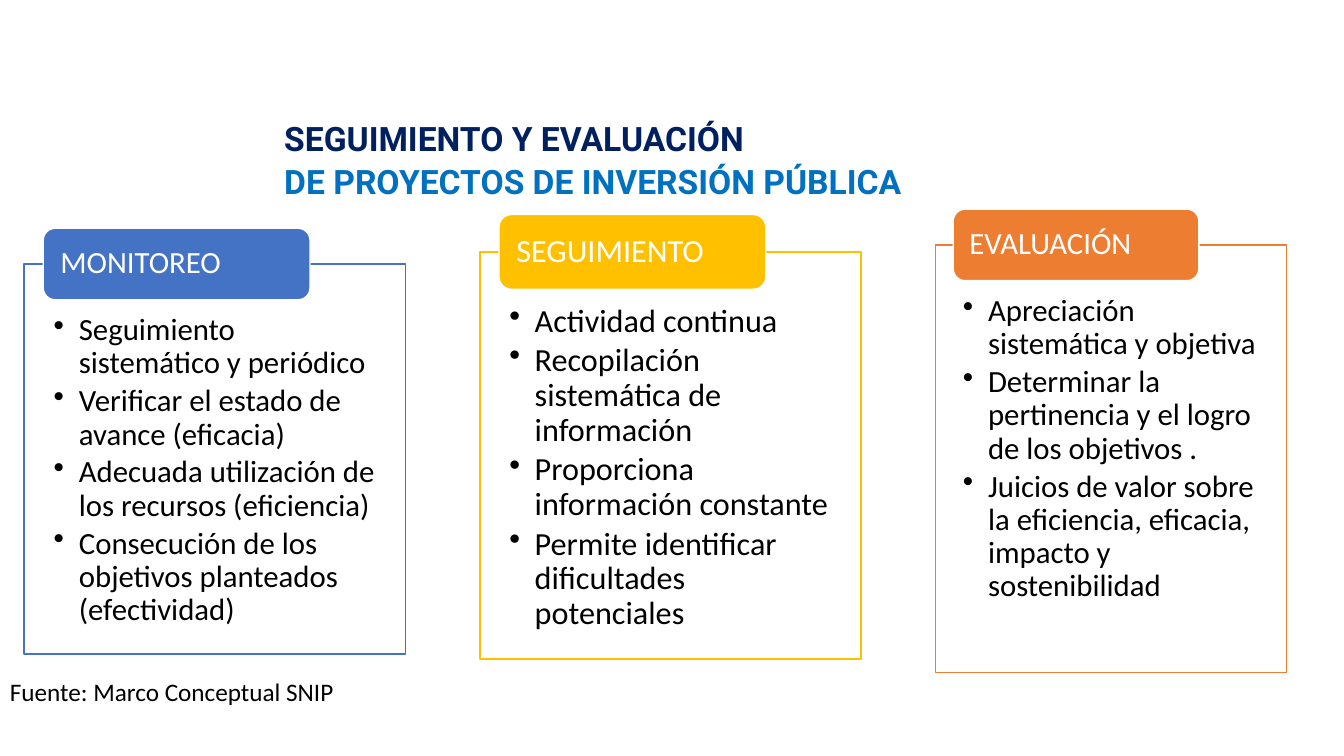
from lxml import etree
from pptx import Presentation
from pptx.dml.color import RGBColor
from pptx.enum.shapes import MSO_SHAPE
from pptx.enum.text import MSO_ANCHOR, PP_ALIGN
from pptx.oxml.ns import qn
from pptx.util import Inches, Pt

RECTANGLE = MSO_SHAPE.RECTANGLE
ROUNDED = MSO_SHAPE.ROUNDED_RECTANGLE
TOP, MIDDLE = MSO_ANCHOR.TOP, MSO_ANCHOR.MIDDLE
LEFT = PP_ALIGN.LEFT

WIDTH, HEIGHT = Inches(13.33), Inches(7.5)
BODY_FONT, TITLE_FONT = "Calibri", "Roboto"
WHITE, BLACK = "FFFFFF", "000000"
FIRST_CARD, CARD_STEP = 1.8, 33.91  # percent of the slide's width

# heading, colour, text size, top, width and height in percent, points
CARDS = [
    ("MONITOREO", "4472C4", 22, 34.93, 28.36, 51.6, [
        "Seguimiento sistemático y periódico",
        "Verificar el estado de avance (eficacia)",
        "Adecuada utilización de los recursos (eficiencia)",
        "Consecución de los objetivos planteados (efectividad)"]),
    ("SEGUIMIENTO", "FFC000", 23, 33.33, 28.36, 53.87, [
        "Actividad continua",
        "Recopilación sistemática de información",
        "Proporciona información constante",
        "Permite identificar dificultades potenciales"]),
    ("EVALUACIÓN", "ED7D31", 22, 32.4, 26.11, 56.53, [
        "Apreciación sistemática y objetiva",
        "Determinar la pertinencia y el logro de los objetivos .",
        "Juicios de valor sobre la eficiencia, eficacia, impacto y "
        "sostenibilidad"]),
]


def color(value):
    return RGBColor.from_string(value)


def across(percent):
    return round(WIDTH * percent / 100)


def down(percent):
    return round(HEIGHT * percent / 100)


def place(left, top, width, height):
    """Turn shares of the slide, in percent, into lengths."""
    return across(left), down(top), across(width), down(height)


def add_bullet(para):
    properties = para._p.get_or_add_pPr()
    properties.set("marL", str(Inches(0.25)))
    properties.set("indent", str(-Inches(0.25)))
    etree.SubElement(properties, qn("a:buChar"), char="•")


def write(box, lines, size, colors=(BLACK,), font=BODY_FONT, bold=False,
          bullets=False, anchor=TOP, insets=None, spacing=None, before=0,
          after=0):
    """Fill a box with paragraphs; colors are taken in turn."""
    frame = box.text_frame
    frame.word_wrap = True
    frame.vertical_anchor = anchor
    if insets:
        (frame.margin_left, frame.margin_top,
         frame.margin_right, frame.margin_bottom) = insets
    for index, line in enumerate(lines):
        para = frame.paragraphs[0] if index == 0 else frame.add_paragraph()
        para.alignment = LEFT
        if spacing:
            para.line_spacing = spacing
        if index and before:
            para.space_before = Pt(before)
        para.space_after = Pt(after)
        if bullets:
            add_bullet(para)
        span = para.add_run()
        span.text = line
        span.font.name = font
        span.font.size = Pt(size)
        span.font.bold = bold
        span.font.color.rgb = color(colors[index % len(colors)])


def add_panel(page, kind, area, fill, line, opacity=100):
    panel = page.shapes.add_shape(kind, *place(*area))
    panel.shadow.inherit = False
    panel.fill.solid()
    panel.fill.fore_color.rgb = color(fill)
    if opacity < 100:
        tone = panel._element.spPr.find(qn("a:solidFill"))[0]
        etree.SubElement(tone, qn("a:alpha"), val=str(opacity * 1000))
    panel.line.color.rgb = color(line)
    panel.line.width = Pt(1)
    return panel


def add_card(page, left, heading, accent, size, top, width, height, points):
    """Draw a bulleted frame with its heading tab centred on the top edge."""
    tab_height = 0.43 * size
    side = across(0.0776 * width)
    body = add_panel(page, RECTANGLE, (left, top, width, height),
                     WHITE, accent, opacity=90)
    write(body, points, size, bullets=True, spacing=0.9, after=0.15 * size,
          insets=(side, down(0.7 * tab_height), side, down(0.24 * tab_height)))

    tab_area = (left + 0.05 * width, top - tab_height / 2,
                0.7 * width, tab_height)
    tab = add_panel(page, ROUNDED, tab_area, accent, WHITE)
    side = across(0.036 * width)
    write(tab, [heading], size, colors=(WHITE,), anchor=MIDDLE, spacing=0.9,
          insets=(side, 0, side, 0))


def add_label(page, area, lines, size, **style):
    box = page.shapes.add_textbox(*place(*area))
    write(box, lines, size, **style)


def main():
    deck = Presentation()
    deck.slide_width, deck.slide_height = WIDTH, HEIGHT
    page = deck.slides.add_slide(deck.slide_layouts[6])
    add_label(page, (20.41, 14.93, 74.04, 12.53),
              ["SEGUIMIENTO Y EVALUACIÓN",
               "DE PROYECTOS DE INVERSIÓN PÚBLICA"],
              24, colors=("002060", "0070C0"), font=TITLE_FONT, bold=True,
              before=1, after=1)
    for index, card in enumerate(CARDS):
        add_card(page, FIRST_CARD + index * CARD_STEP, *card)
    add_label(page, (0, 88.8, 27.23, 5.33),
              ["Fuente: Marco Conceptual SNIP"], 18)
    deck.save("out.pptx")


if __name__ == "__main__":
    main()
